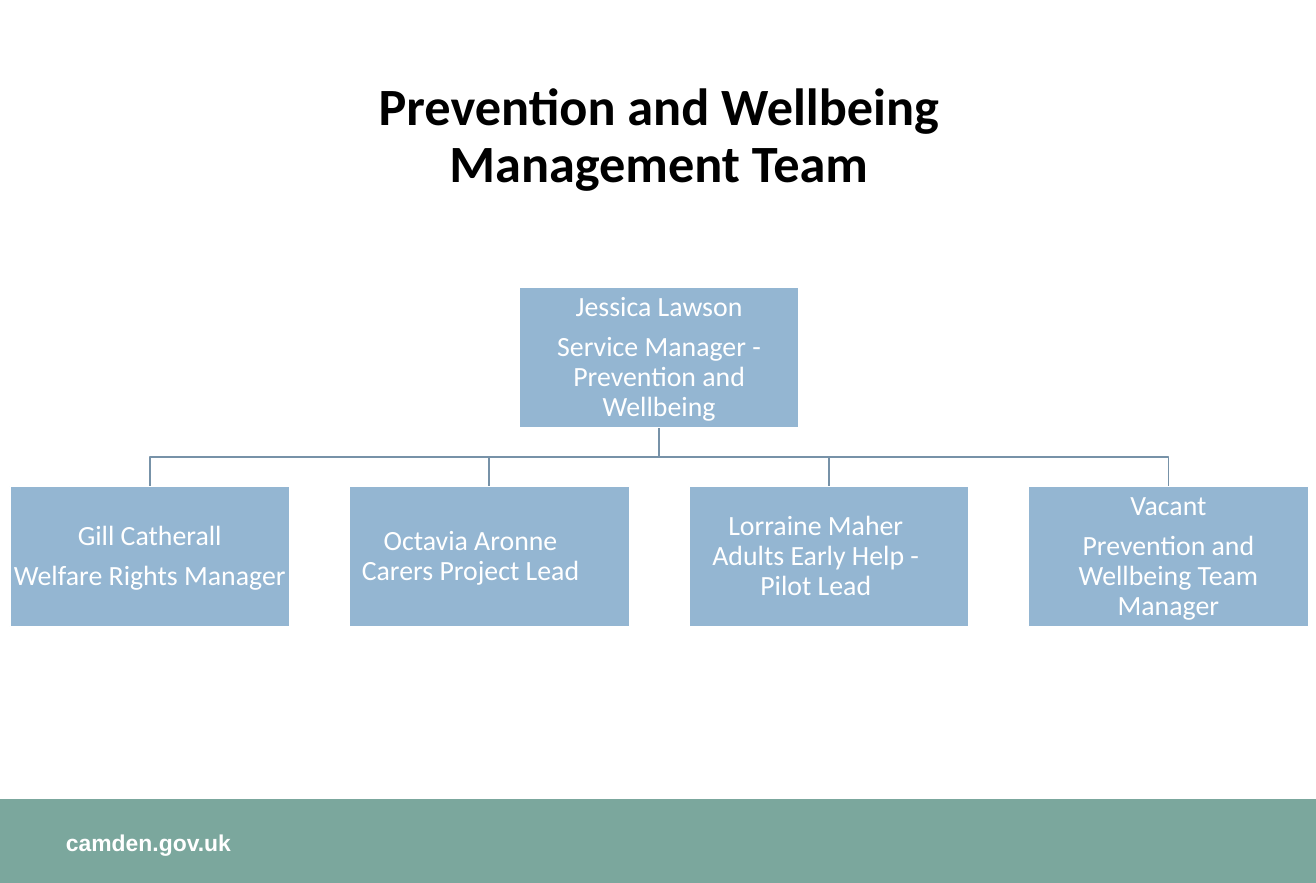
import pptx
import pptx.util
import pptx.dml.color
import pptx.enum.shapes
import pptx.enum.text

Pt = pptx.util.Pt
RGB = pptx.dml.color.RGBColor.from_string
RECT = pptx.enum.shapes.MSO_SHAPE.RECTANGLE
ALIGN = pptx.enum.text.PP_ALIGN
ANCHOR = pptx.enum.text.MSO_ANCHOR

# Theme: colours and type styles
theme = {
    "band": RGB("7BA79D"), "box": RGB("94B6D2"),
    "line": RGB("7792A8"), "white": RGB("FFFFFF"),
    "title": ({"name": "Calibri", "size": Pt(32), "bold": True}, RGB("000000")),
    "staff": ({"name": "Calibri", "size": Pt(17), "bold": False}, RGB("FFFFFF")),
    "site": ({"name": "Arial", "size": Pt(14), "bold": True}, RGB("FFFFFF")),
}


def write(frame, lines, style, form, inset=(0, 0, 0, 0), anchor=ANCHOR.MIDDLE):
    """Fill a text frame with one paragraph per line."""
    frame.word_wrap = True
    frame.auto_size = pptx.enum.text.MSO_AUTO_SIZE.NONE
    frame.vertical_anchor = anchor
    for side, gap in zip(("left", "top", "right", "bottom"), inset):
        setattr(frame, "margin_" + side, Pt(gap))
    values, color = theme[style]
    for i, line in enumerate(lines):
        para = frame.paragraphs[0] if i == 0 else frame.add_paragraph()
        para.text = line
        for key, value in form.items():
            setattr(para, key, value)
        for run in para.runs:
            run.font.color.rgb = color
            for key, value in values.items():
                setattr(run.font, key, value)


def block(x, y, w, h, fill, line=None):
    """Draw a flat rectangle, outlined if a line colour is given."""
    shape = slide.shapes.add_shape(RECT, Pt(x), Pt(y), Pt(w), Pt(h))
    shape.shadow.inherit = False
    shape.fill.solid()
    shape.fill.fore_color.rgb = fill
    if line is None:
        shape.line.fill.background()
    else:
        shape.line.color.rgb = line
        shape.line.width = Pt(1)
    return shape


deck = pptx.Presentation()
deck.slide_width, deck.slide_height = Pt(805), Pt(540)
slide = deck.slides.add_slide(deck.slide_layouts[5])

# Footer band and web address
block(0, 488.8, 805, 51.2, theme["band"])
site = slide.shapes.add_textbox(Pt(40.3), Pt(506.9), Pt(332), Pt(17.3))
write(site.text_frame, ["camden.gov.uk"], "site", {"alignment": ALIGN.LEFT},
      (0, 0, 7.2, 0), ANCHOR.TOP)

# Title
title = slide.shapes.title
title.left, title.top, title.width, title.height = Pt(41), Pt(38.9), Pt(724.3), Pt(90)
write(title.text_frame, ["Prevention and Wellbeing\vManagement Team"], "title",
      {"alignment": ALIGN.CENTER, "line_spacing": 0.9}, (7.2, 3.6, 7.2, 3.6))

# Chart layout
mid, pitch = 403.2, 207.7
wide, high = 171.4, 85.7
top, low = 175.7, 297.4
base = top + high
bend = (base + low) / 2

# Team: lines, space between them, right indent of the name
boss = ["Jessica Lawson", "Service Manager - Prevention and Wellbeing"]
team = [
    (["Gill Catherall", "Welfare Rights Manager"], 6, 0),
    (["Octavia Aronne", "Carers Project Lead"], 0, 23),
    (["Lorraine Maher", "Adults Early Help - Pilot Lead"], 0, 16),
    (["Vacant", "Prevention and Wellbeing Team Manager"], 6, 0),
]
posts = [(mid, top, boss, 6, 0)]
for i, (lines, gap, shift) in enumerate(team):
    posts.append((mid + (i - 1.5) * pitch, low, lines, gap, shift))

# Branches from the manager to each report
for x, *rest in posts[1:]:
    path = slide.shapes.build_freeform(Pt(mid), Pt(base))
    path.add_line_segments([(Pt(mid), Pt(bend)), (Pt(x), Pt(bend)), (Pt(x), Pt(low))],
                           close=False)
    branch = path.convert_to_shape()
    branch.shadow.inherit = False
    branch.fill.background()
    branch.line.color.rgb = theme["line"]
    branch.line.width = Pt(1)

# Post boxes
for x, y, lines, gap, shift in posts:
    card = block(x - wide / 2, y, wide, high, theme["box"], theme["white"])
    write(card.text_frame, lines, "staff",
          {"alignment": ALIGN.CENTER, "line_spacing": 0.9}, (0.8, 0.8, 0.8, 0.8))
    name = card.text_frame.paragraphs[0]
    name.space_after = Pt(gap)
    if shift:
        name._p.get_or_add_pPr().set("marR", str(Pt(shift)))

deck.save("out.pptx")
